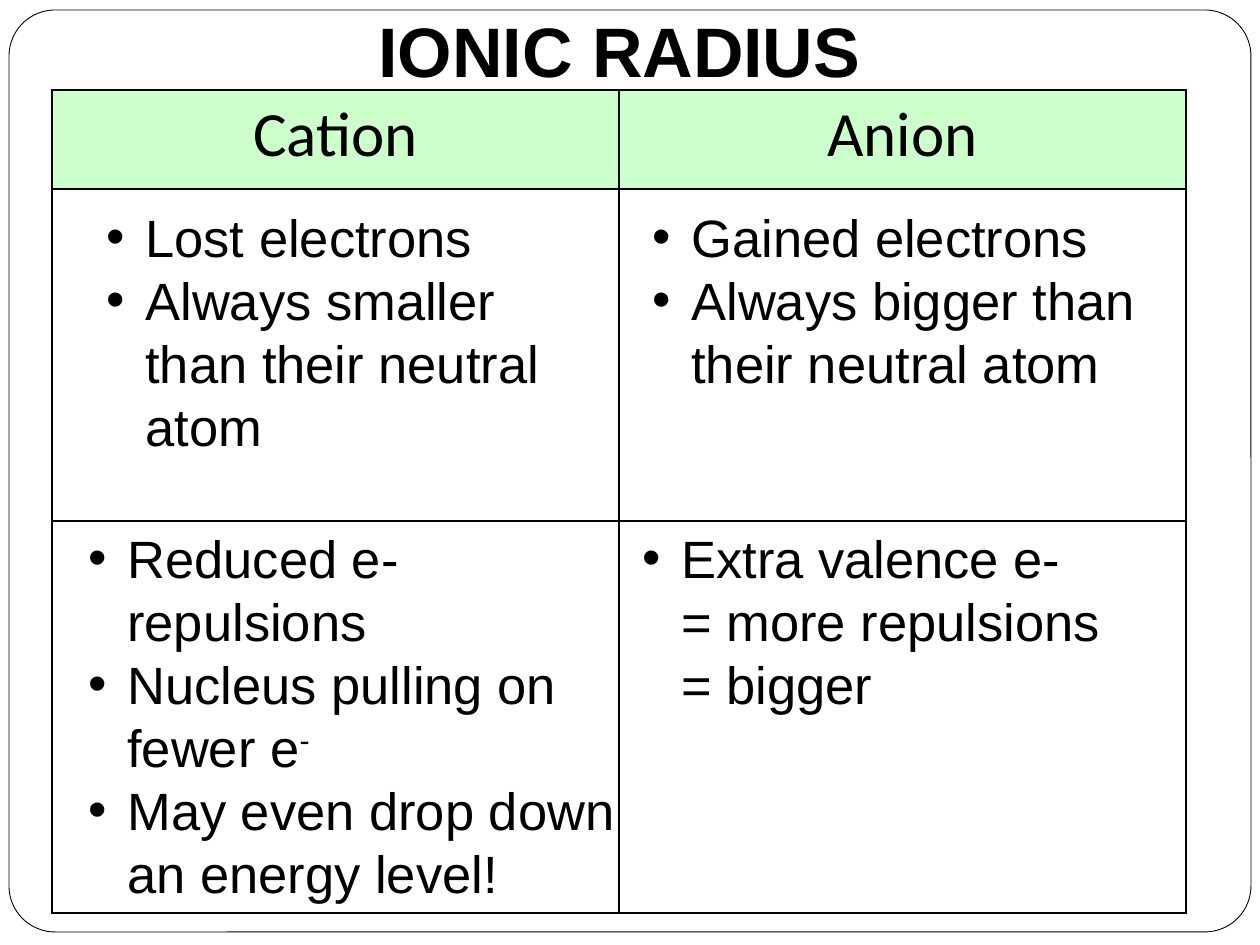
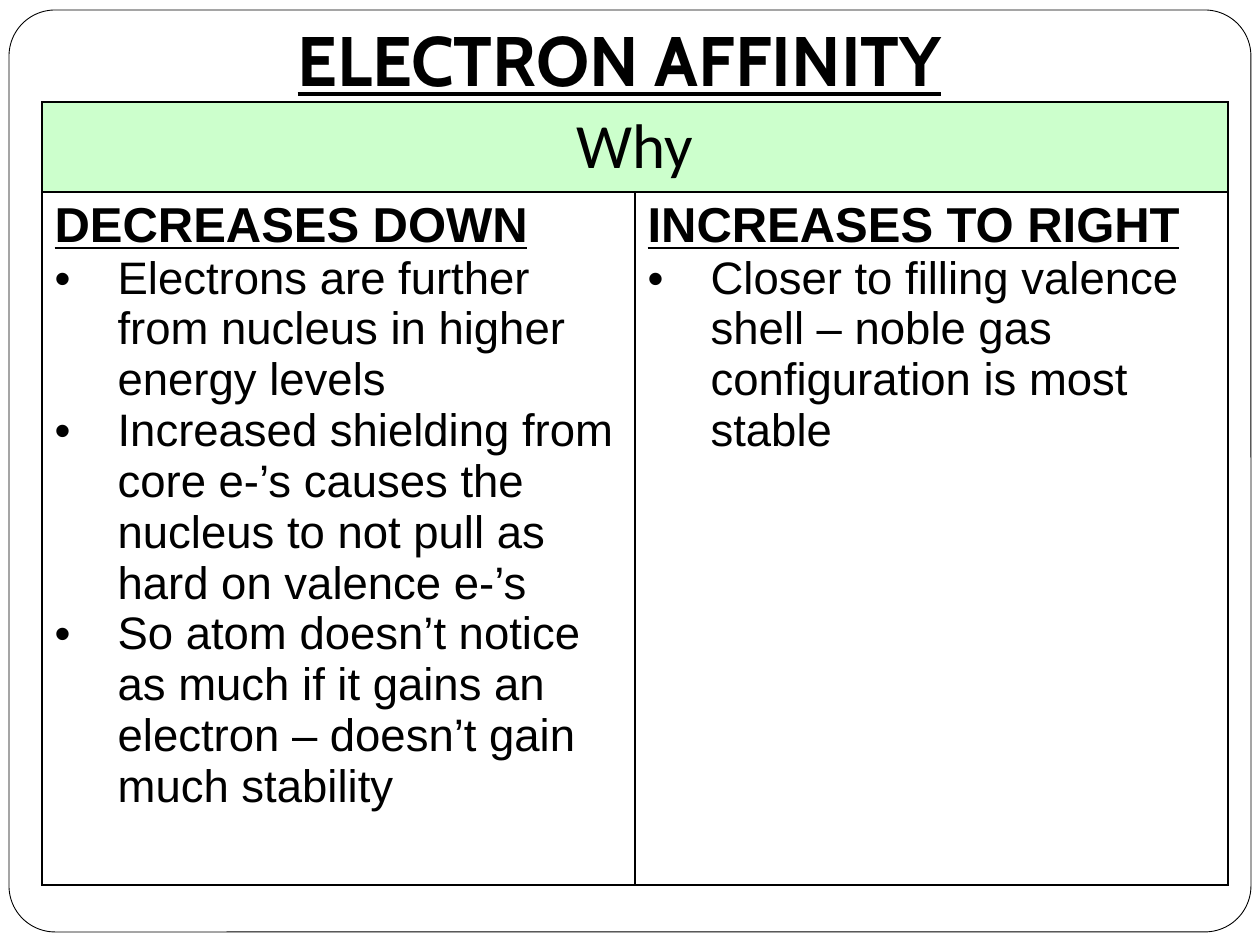
from lxml.etree import SubElement
from pptx import Presentation
from pptx.dml.color import RGBColor
from pptx.enum.shapes import MSO_SHAPE
from pptx.enum.text import MSO_ANCHOR, MSO_AUTO_SIZE, PP_ALIGN
from pptx.oxml import parse_xml
from pptx.oxml.ns import nsdecls, qn
from pptx.util import Emu, Pt

BLACK = RGBColor(0x00, 0x00, 0x00)
WHITE = RGBColor(0xFF, 0xFF, 0xFF)
HEADER_GREEN = RGBColor(0xCC, 0xFF, 0xCC)
BODY_FONT = "Arial"
HEADER_FONT = "Calibri"
PX_PER_INCH = 126
TITLE_ONLY = 5


def px(length):
    """Turn pixels into EMU."""
    return Emu(round(length * 914400 / PX_PER_INCH))


def style_runs(paragraph, size, font=BODY_FONT, bold=False, underline=False):
    """Format every run of a paragraph in black."""
    for run in paragraph.runs:
        run.font.size = Pt(size)
        run.font.name = font
        run.font.bold = bold
        run.font.underline = underline
        run.font.color.rgb = BLACK


def write_bullet(paragraph, wording, size, indent):
    """Write a bullet item; what follows a caret is raised."""
    base, _, raised = wording.partition("^")
    paragraph.text = base
    if raised:
        superscript = paragraph.add_run()
        superscript.text = raised
        superscript.font._element.set("baseline", "30000")
    style_runs(paragraph, size)
    properties = paragraph._p.get_or_add_pPr()
    properties.set("marL", str(px(indent)))
    properties.set("indent", str(-px(indent)))
    SubElement(properties, qn("a:buFont")).set("typeface", BODY_FONT)
    SubElement(properties, qn("a:buChar")).set("char", "•")


def add_frame(slide):
    """Draw the rounded page frame and hand it to the slide master."""
    frame = slide.shapes.add_shape(
        MSO_SHAPE.ROUNDED_RECTANGLE, px(9), px(10), px(1242), px(922))
    frame.adjustments[0] = 0.05
    frame.shadow.inherit = False
    frame.fill.solid()
    frame.fill.fore_color.rgb = WHITE
    frame.line.color.rgb = BLACK
    frame.line.width = Pt(0.5)
    element = frame._element
    element.nvSpPr.cNvPr.set("id", "20")
    slide.slide_layout.slide_master.shapes._spTree.insert(2, element)


def set_title(slide, wording, top, font, underline=False):
    """Place and format the slide title."""
    title = slide.shapes.title
    title.left, title.top, title.width, title.height = map(px, (42, top, 1155, 92))
    text_frame = title.text_frame
    text_frame.text = wording
    text_frame.auto_size = MSO_AUTO_SIZE.NONE
    text_frame.vertical_anchor = MSO_ANCHOR.BOTTOM
    text_frame.margin_top = px(6)
    text_frame.margin_bottom = px(13)
    heading = text_frame.paragraphs[0]
    heading.alignment = PP_ALIGN.CENTER
    style_runs(heading, 40, font, bold=True, underline=underline)


def style_cell(cell, is_header):
    """Fill a cell and rule its four sides."""
    if is_header:
        cell.fill.solid()
        cell.fill.fore_color.rgb = HEADER_GREEN
    else:
        cell.fill.background()
    properties = cell._tc.get_or_add_tcPr()
    for position, side in enumerate("LRTB"):
        properties.insert(position, parse_xml(
            f'<a:ln{side} {nsdecls("a")} w="12700"><a:solidFill>'
            f'<a:srgbClr val="{BLACK}"/></a:solidFill></a:ln{side}>'))


def add_grid(slide, left, top, width, row_heights, headers):
    """Add a two-column table with green headers and return it."""
    table = slide.shapes.add_table(
        len(row_heights), 2, px(left), px(top), px(width), px(sum(row_heights))).table
    table.first_row = table.horz_banding = False
    for column in table.columns:
        column.width = px(width / 2)
    for index, height in enumerate(row_heights):
        table.rows[index].height = px(height)
        for cell in table.rows[index].cells:
            style_cell(cell, is_header=index == 0)
    if len(headers) == 1:
        table.cell(0, 0).merge(table.cell(0, 1))
    for column, header in enumerate(headers):
        cell = table.cell(0, column)
        cell.text_frame.text = header
        paragraph = cell.text_frame.paragraphs[0]
        paragraph.alignment = PP_ALIGN.CENTER
        style_runs(paragraph, 36, HEADER_FONT)
    return table


def add_bullet_box(slide, box, items):
    """Add a text box of bullet items."""
    text_frame = slide.shapes.add_textbox(*map(px, box)).text_frame
    text_frame.word_wrap = True
    for index, item in enumerate(items):
        paragraph = text_frame.add_paragraph() if index else text_frame.paragraphs[0]
        write_bullet(paragraph, item, size=30, indent=39)


def fill_reason(cell, trend, reasons):
    """Write an underlined trend and its reasons into a cell."""
    text_frame = cell.text_frame
    text_frame.text = trend
    style_runs(text_frame.paragraphs[0], 28, bold=True, underline=True)
    for reason in reasons:
        write_bullet(text_frame.add_paragraph(), reason, size=26, indent=63)


def build_ionic_radius(slide):
    """Build the comparison of cations and anions."""
    left, top, row_heights = 52, 90, (99, 332, 392)
    set_title(slide, "IONIC RADIUS", 13, BODY_FONT)
    add_grid(slide, left, top, 1134, row_heights, ("Cation", "Anion"))
    size_top = top + row_heights[0] + 10
    cause_top = size_top + row_heights[1] - 11
    add_bullet_box(slide, (left + 42, size_top, 462, 267), (
        "Lost electrons", "Always smaller than their neutral atom"))
    add_bullet_box(slide, (left + 588, size_top, 546, 204), (
        "Gained electrons", "Always bigger than their neutral atom"))
    add_bullet_box(slide, (left + 24, cause_top, 567, 394), (
        "Reduced e- repulsions",
        "Nucleus pulling on fewer e^-",
        "May even drop down an energy level!"))
    add_bullet_box(slide, (left + 578, cause_top, 630, 204), (
        "Extra valence e-\n= more repulsions\n= bigger",))


def build_electron_affinity(slide):
    """Build the reasons behind the two affinity trends."""
    set_title(slide, "ELECTRON AFFINITY", 22, "Cabin", underline=True)
    table = add_grid(slide, 42, 102, 1186, (90, 693), ("Why",))
    fill_reason(table.cell(1, 0), "DECREASES DOWN", (
        "Electrons are further from nucleus in higher energy levels",
        "Increased shielding from core e-’s causes the nucleus to not pull "
        "as hard on valence e-’s",
        "So atom doesn’t notice as much if it gains an electron – "
        "doesn’t gain much stability"))
    fill_reason(table.cell(1, 1), "INCREASES TO RIGHT", (
        "Closer to filling valence shell – noble gas configuration is most stable",))


def main():
    """Build and save the presentation."""
    presentation = Presentation()
    presentation.slide_width, presentation.slide_height = px(1260), px(945)
    layout = presentation.slide_layouts[TITLE_ONLY]
    radius_slide = presentation.slides.add_slide(layout)
    add_frame(radius_slide)
    build_ionic_radius(radius_slide)
    build_electron_affinity(presentation.slides.add_slide(layout))
    presentation.save("out.pptx")


if __name__ == "__main__":
    main()
